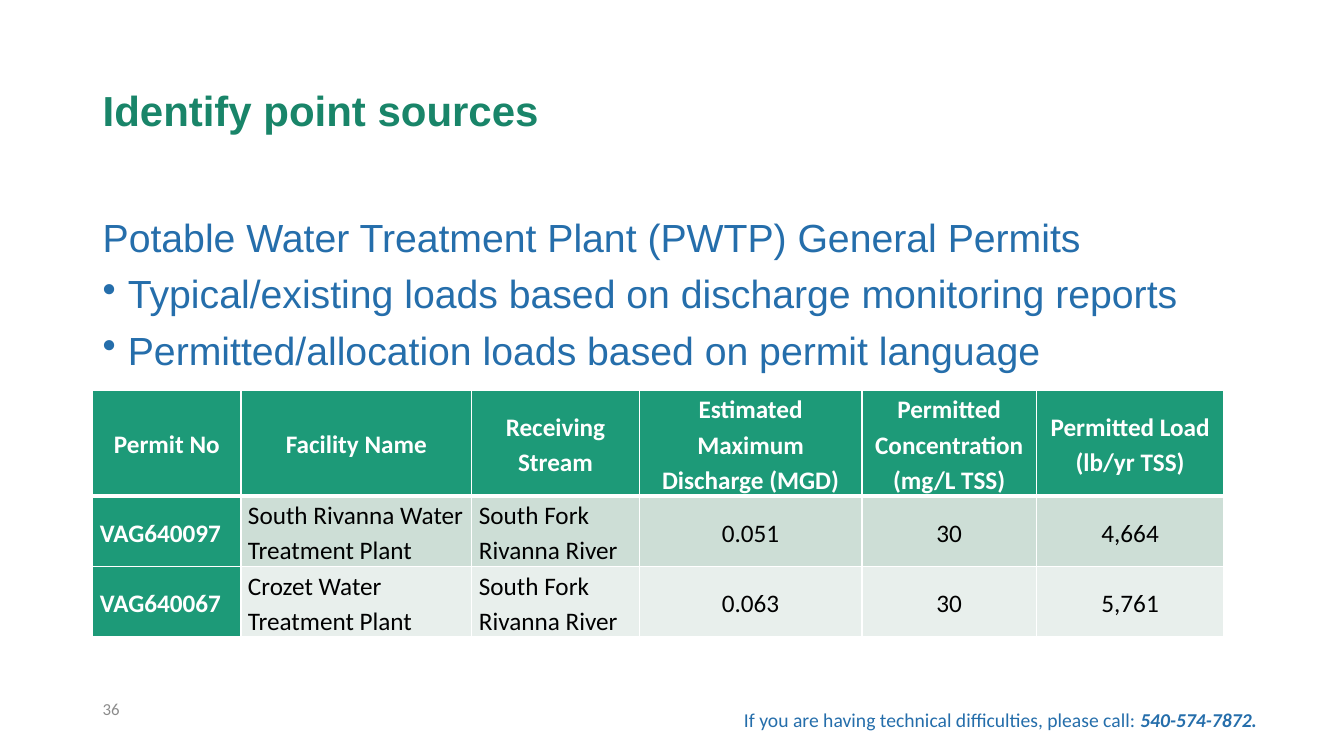
from dataclasses import dataclass

from lxml import etree
from pptx import Presentation
from pptx import util as u
from pptx.dml.color import RGBColor
from pptx.enum import text
from pptx.oxml import ns

PX = 9144
BLUE = "256EAB"
GREEN = "1D9A78"
WHITE = "FFFFFF"
MID = text.MSO_ANCHOR.MIDDLE
TOP = text.MSO_ANCHOR.TOP


@dataclass(frozen=True)
class Run:
    words: str
    size: int
    font: str
    hue: str
    bold: bool = False
    slant: bool = False


@dataclass(frozen=True)
class Para:
    runs: tuple[Run, ...]
    lead: float = 1.0
    gap: int = 0
    dot: bool = False
    mid: bool = False


@dataclass(frozen=True)
class Box:
    left: int
    top: int
    width: int
    height: int
    paras: tuple[Para, ...]
    anchor: text.MSO_ANCHOR = TOP


def px(size: int) -> u.Emu:
    return u.Emu(size * PX)


def color(code: str) -> RGBColor:
    return RGBColor.from_string(code)


def write(frame, paras: tuple[Para, ...]) -> None:
    frame.word_wrap = True
    for num, item in enumerate(paras):
        para = frame.add_paragraph() if num else frame.paragraphs[0]
        para.line_spacing = item.lead
        if item.gap:
            para.space_before = u.Pt(item.gap)
        if item.mid:
            para.alignment = text.PP_ALIGN.CENTER
        if item.dot:
            props = para._p.get_or_add_pPr()
            props.set("marL", str(px(25)))
            props.set("indent", str(-px(25)))
            etree.SubElement(props, ns.qn("a:buChar")).set("char", "•")
        for part in item.runs:
            run = para.add_run()
            run.text = part.words
            font = run.font
            font.size = u.Pt(part.size)
            font.name = part.font
            font.color.rgb = color(part.hue)
            font.bold = part.bold
            font.italic = part.slant


def draw(slide, box: Box) -> None:
    shape = slide.shapes.add_textbox(*map(px, (box.left, box.top, box.width, box.height)))
    shape.text_frame.vertical_anchor = box.anchor
    write(shape.text_frame, box.paras)


def edge(cell, side: str, width: int) -> None:
    line = etree.SubElement(cell._tc.get_or_add_tcPr(), ns.qn(f"a:ln{side}"), w=str(u.Pt(width)))
    fill = etree.SubElement(line, ns.qn("a:solidFill"))
    etree.SubElement(fill, ns.qn("a:srgbClr"), val=WHITE)


def fill_cell(cell, words: str, row: int, col: int) -> None:
    head = row == 0 or col == 0
    for side in "LRTB":
        thick = (row == 0 and side == "B") or (row == 1 and side == "T")
        edge(cell, side, 3 if thick else 1)
    cell.fill.solid()
    cell.fill.fore_color.rgb = color(GREEN if head else BANDS[row - 1])
    cell.margin_left = cell.margin_right = px(7)
    cell.margin_top = cell.margin_bottom = 0
    cell.vertical_anchor = MID
    run = Run(words, 18, "Calibri", WHITE if head else "000000", head)
    write(cell.text_frame, (Para((run,), 1.15, mid=row == 0 or col > 2),))


def draw_table(slide) -> None:
    frame = slide.shapes.add_table(len(ROWS), len(COLS), px(92), px(387), px(sum(COLS)), px(sum(TALL)))
    table = frame.table
    for col, width in zip(table.columns, COLS):
        col.width = px(width)
    for row, height in zip(table.rows, TALL):
        row.height = px(height)
    for row, line in enumerate(ROWS):
        for col, words in enumerate(line):
            fill_cell(table.cell(row, col), words, row, col)


COLS = (147, 229, 166, 221, 173, 186)
TALL = (105, 70, 70)
BANDS = ("CDDED6", "E8EFEC")
ROWS = (
    ("Permit No", "Facility Name", "Receiving Stream", "Estimated Maximum Discharge (MGD)",
     "Permitted Concentration (mg/L TSS)", "Permitted Load (lb/yr TSS)"),
    ("VAG640097", "South Rivanna Water Treatment Plant", "South Fork Rivanna River", "0.051", "30", "4,664"),
    ("VAG640067", "Crozet Water Treatment Plant", "South Fork Rivanna River", "0.063", "30", "5,761"),
)
POINTS = (
    "Potable Water Treatment Plant (PWTP) General Permits",
    "Typical/existing loads based on discharge monitoring reports",
    "Permitted/allocation loads based on permit language",
)
TITLE = Para((Run("Identify point sources", 30, "Arial", "198569", True),), 0.9)
BODY = tuple(
    Para((Run(words, 28, "Arial", BLUE),), 0.9, 10 if num else 0, num > 0)
    for num, words in enumerate(POINTS)
)
PAGE = Para((Run("36", 12, "Calibri", "8C8C8C"),))
HELP = Para((
    Run("If you are having technical difficulties, please call: ", 14, "Calibri", BLUE),
    Run("540-574-7872.", 14, "Calibri", BLUE, True, True),
))
BOXES = (
    Box(92, 40, 1150, 145, (TITLE,), MID),
    Box(92, 212, 1099, 283, BODY),
    Box(92, 690, 100, 26, (PAGE,), MID),
    Box(728, 697, 532, 34, (HELP,)),
)


def main() -> None:
    deck = Presentation()
    deck.slide_width, deck.slide_height = px(1333), px(750)
    slide = deck.slides.add_slide(deck.slide_layouts[6])
    for box in BOXES:
        draw(slide, box)
    draw_table(slide)
    deck.save("out.pptx")


if __name__ == "__main__":
    main()
